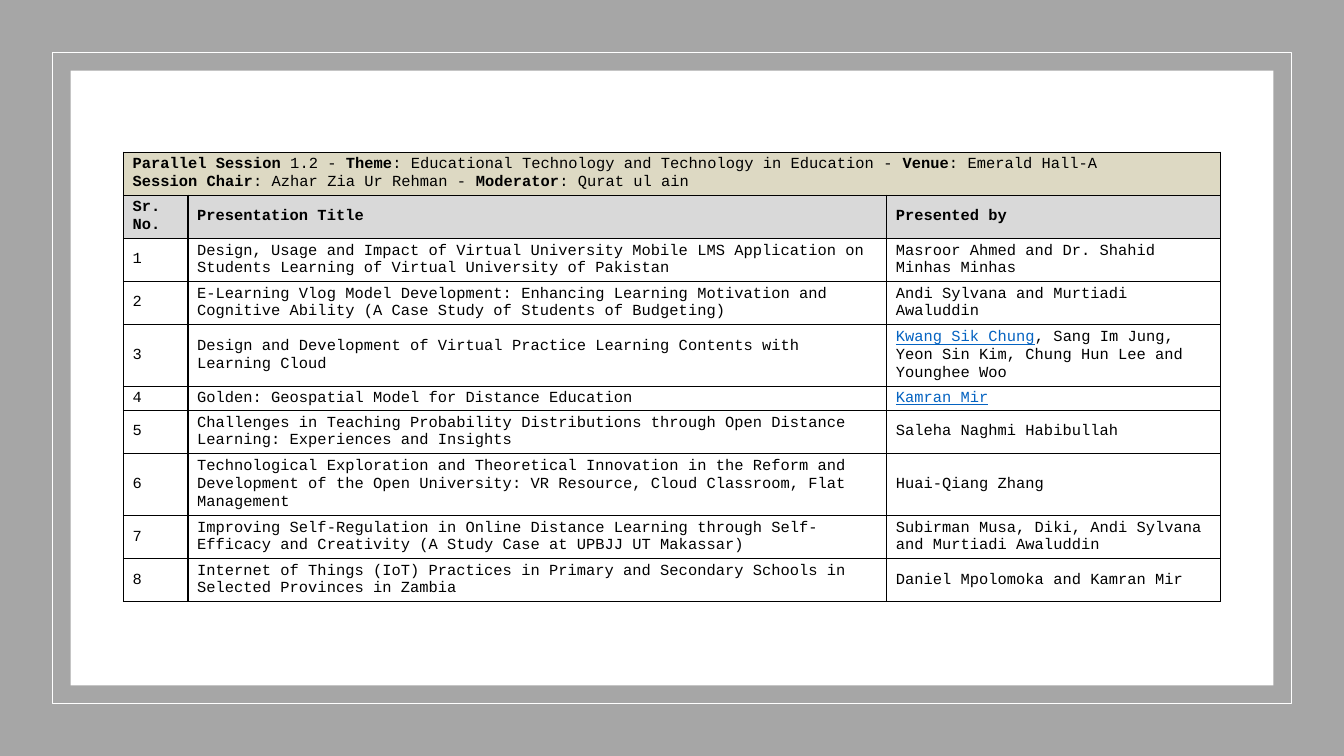
"""Build the programme slide of Parallel Session 1.2."""
import dataclasses

import pptx
import pptx.dml.color
import pptx.enum.shapes
import pptx.enum.text
import pptx.oxml
import pptx.oxml.ns
import pptx.util

BOLD, LINK, PLAIN = "bold", "link", "plain"

SESSION = [
    [("Parallel Session", BOLD), (" 1.2 - ", PLAIN), ("Theme", BOLD),
     (": Educational Technology and Technology in Education - ", PLAIN),
     ("Venue", BOLD), (": Emerald Hall-A", PLAIN)],
    [("Session Chair", BOLD), (": Azhar Zia Ur Rehman - ", PLAIN),
     ("Moderator", BOLD), (": Qurat ul ain", PLAIN)],
]
HEADINGS = ["Sr. No.", "Presentation Title", "Presented by"]
TALKS = [
    ("Design, Usage and Impact of Virtual University Mobile LMS Application on "
     "Students Learning of Virtual University of Pakistan",
     [("Masroor Ahmed and Dr. Shahid Minhas Minhas", PLAIN)]),
    ("E-Learning Vlog Model Development: Enhancing Learning Motivation and "
     "Cognitive Ability (A Case Study of Students of Budgeting)",
     [("Andi Sylvana and Murtiadi Awaluddin", PLAIN)]),
    ("Design and Development of Virtual Practice Learning Contents with Learning Cloud",
     [("Kwang Sik Chung", LINK),
      (", Sang Im Jung, Yeon Sin Kim, Chung Hun Lee and Younghee Woo", PLAIN)]),
    ("Golden: Geospatial Model for Distance Education", [("Kamran Mir", LINK)]),
    ("Challenges in Teaching Probability Distributions through Open Distance "
     "Learning: Experiences and Insights",
     [("Saleha Naghmi Habibullah", PLAIN)]),
    ("Technological Exploration and Theoretical Innovation in the Reform and "
     "Development of the Open University: VR Resource, Cloud Classroom, Flat Management",
     [("Huai-Qiang Zhang", PLAIN)]),
    ("Improving Self-Regulation in Online Distance Learning through Self-Efficacy "
     "and Creativity (A Study Case at UPBJJ UT Makassar)",
     [("Subirman Musa, Diki, Andi Sylvana and Murtiadi Awaluddin", PLAIN)]),
    ("Internet of Things (IoT) Practices in Primary and Secondary Schools in "
     "Selected Provinces in Zambia",
     [("Daniel Mpolomoka and Kamran Mir", PLAIN)]),
]

PAGE_SIZE = (13.33, 7.5)
TABLE_TOP, TABLE_HEIGHT = 1.51, 4.46
COLUMNS = [0.64, 6.93, 3.31]
ROW_LINES = [2, 2, 2, 2, 3, 1, 2, 3, 2, 2]
LINE_HEIGHT = 0.19
CELL_INSET = 0.09


@dataclasses.dataclass(frozen=True)
class Theme:
    font: str = "Courier New"
    size: int = 11
    rule: int = 1
    ink: str = "000000"
    link: str = "0563C1"
    paper: str = "FFFFFF"
    surround: str = "A6A6A6"
    session: str = "DDD9C3"
    heading: str = "D9D9D9"


THEME = Theme()
FRAMES = [(0, THEME.surround, None), (0.52, None, THEME.paper), (0.7, THEME.paper, None)]


def inches(value):
    return pptx.util.Inches(value)


def colour(code):
    return pptx.dml.color.RGBColor.from_string(code)


def paint(fill, code):
    if code:
        fill.solid()
        fill.fore_color.rgb = colour(code)
    else:
        fill.background()


def add_frame(page, inset, fill, line):
    width, height = (side - 2 * inset for side in PAGE_SIZE)
    frame = page.shapes.add_shape(
        pptx.enum.shapes.MSO_SHAPE.RECTANGLE,
        *map(inches, (inset, inset, width, height)))
    frame.shadow.inherit = False
    paint(frame.fill, fill)
    paint(frame.line.fill, line)
    if line:
        frame.line.width = pptx.util.Pt(THEME.rule)


def add_borders(cell):
    properties = cell._tc.get_or_add_tcPr()
    for index, side in enumerate(("lnL", "lnR", "lnT", "lnB")):
        properties.insert(index, pptx.oxml.parse_xml(
            f'<a:{side} {pptx.oxml.ns.nsdecls("a")} w="{pptx.util.Pt(THEME.rule)}">'
            f'<a:solidFill><a:srgbClr val="{THEME.ink}"/></a:solidFill></a:{side}>'))


def write(cell, paragraphs):
    frame = cell.text_frame
    for index, pieces in enumerate(paragraphs):
        para = frame.add_paragraph() if index else frame.paragraphs[0]
        for text, style in pieces:
            span = para.add_run()
            span.text = text
            span.font.name = THEME.font
            span.font.size = pptx.util.Pt(THEME.size)
            span.font.bold = style == BOLD
            span.font.underline = style == LINK
            span.font.color.rgb = colour(THEME.link if style == LINK else THEME.ink)


def add_programme(page):
    rows = [[SESSION], [[[(text, BOLD)]] for text in HEADINGS]]
    for number, (title, presenters) in enumerate(TALKS, 1):
        rows.append([[[(str(number), PLAIN)]], [[(title, PLAIN)]], [presenters]])
    width = sum(COLUMNS)
    table = page.shapes.add_table(
        len(rows), len(COLUMNS),
        *map(inches, ((PAGE_SIZE[0] - width) / 2, TABLE_TOP, width, TABLE_HEIGHT))).table
    for column, column_width in zip(table.columns, COLUMNS):
        column.width = inches(column_width)
    padding = (TABLE_HEIGHT - LINE_HEIGHT * sum(ROW_LINES)) / len(rows)
    fills = [THEME.session, THEME.heading] + [None] * len(TALKS)
    for row, lines, contents, fill in zip(table.rows, ROW_LINES, rows, fills):
        row.height = inches(lines * LINE_HEIGHT + padding)
        for cell in row.cells:
            cell.margin_left = cell.margin_right = inches(CELL_INSET)
            cell.margin_top = cell.margin_bottom = 0
            cell.vertical_anchor = pptx.enum.text.MSO_ANCHOR.MIDDLE
            paint(cell.fill, fill)
            add_borders(cell)
        for cell, paragraphs in zip(row.cells, contents):
            write(cell, paragraphs)
    table.cell(0, 0).merge(table.cell(0, len(COLUMNS) - 1))


def main():
    deck = pptx.Presentation()
    deck.slide_width, deck.slide_height = map(inches, PAGE_SIZE)
    page = deck.slides.add_slide(deck.slide_layouts[6])
    for inset, fill, line in FRAMES:
        add_frame(page, inset, fill, line)
    add_programme(page)
    deck.save("out.pptx")


if __name__ == "__main__":
    main()
